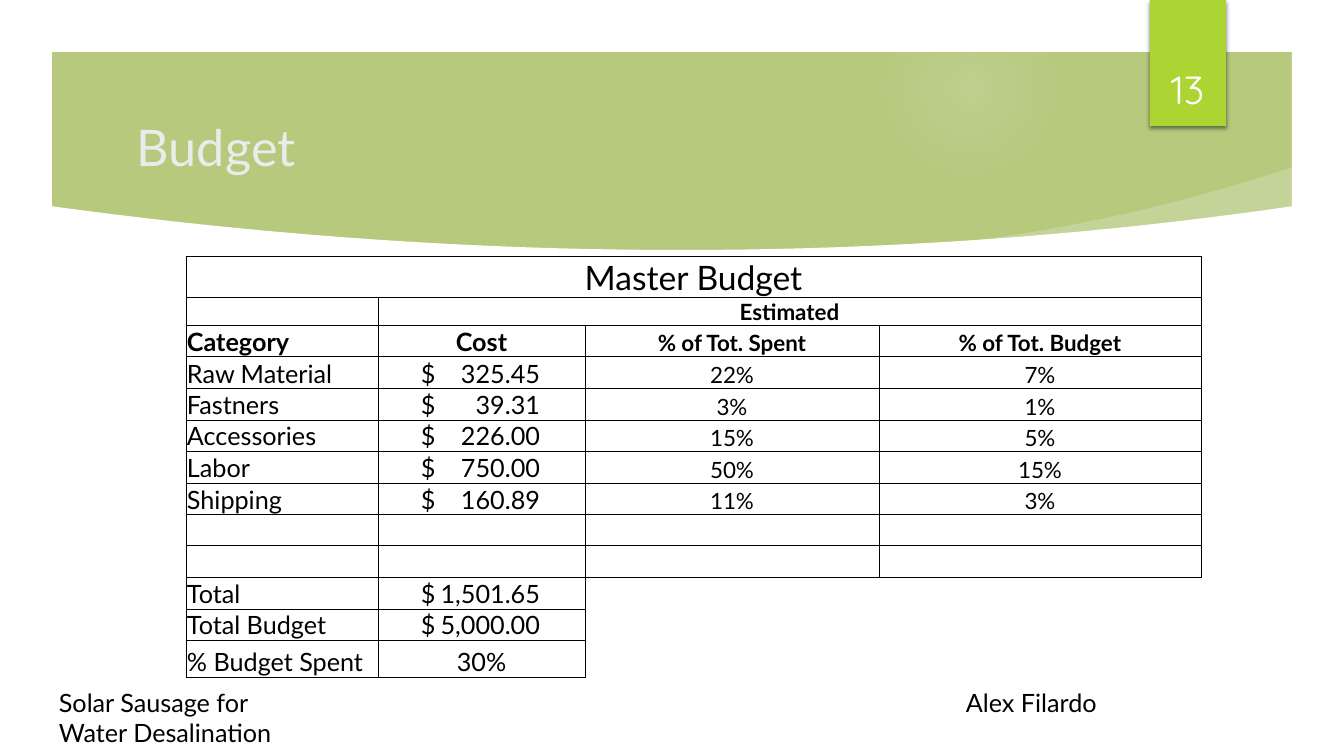
from dataclasses import dataclass
from typing import Optional

from lxml.etree import SubElement
from pptx import Presentation
from pptx.dml.color import RGBColor
from pptx.enum.shapes import MSO_SHAPE as Preset
from pptx.enum.text import MSO_ANCHOR as Anchor, PP_ALIGN as Align
from pptx.oxml import parse_xml
from pptx.oxml.ns import nsdecls, qn
from pptx.util import Pt

EMU_PER_PX = 914400 / 100.8
PLAIN_TABLE = "{2D5ABB26-0587-4C30-8999-92F81FD0307C}"


@dataclass(frozen=True)
class Theme:
    band: str = "B6C97D"
    white: str = "FFFFFF"
    glow: str = "F7F7F7"
    accent: str = "ACD433"
    heading: str = "EBEBEB"
    ink: str = "000000"
    body_font: str = "Lato"
    number_font: str = "Quicksand"
    title_size: int = 36
    number_size: int = 28
    caption_size: int = 24
    text_size: int = 18
    detail_size: int = 16


@dataclass(frozen=True)
class Box:
    left: int
    top: int
    width: int
    height: int


@dataclass(frozen=True)
class BudgetLine:
    category: str = ""
    cost: str = ""
    spent: str = ""
    budget: str = ""
    bold: bool = False
    boxed: int = 4  # number of cells with borders


THEME = Theme()
COLUMN_EDGES = (186, 378, 585, 879, 1201)
ROW_EDGES = (256, 297, 325, 356, 388, 419, 450, 482, 513, 544, 576, 607, 638, 675)
COST_INSET, COST_WIDTH = 43, 119
BUDGET = (
    BudgetLine("Master Budget"),
    BudgetLine(cost="Estimated", bold=True),
    BudgetLine("Category", "Cost", "% of Tot. Spent", "% of Tot. Budget", bold=True),
    BudgetLine("Raw Material", "$\t325.45", "22%", "7%"),
    BudgetLine("Fastners", "$\t39.31", "3%", "1%"),
    BudgetLine("Accessories", "$\t226.00", "15%", "5%"),
    BudgetLine("Labor", "$\t750.00", "50%", "15%"),
    BudgetLine("Shipping", "$\t160.89", "11%", "3%"),
    BudgetLine(),
    BudgetLine(),
    BudgetLine("Total", "$\t1,501.65", boxed=2),
    BudgetLine("Total Budget", "$\t5,000.00", boxed=2),
    BudgetLine("% Budget Spent", "30%", boxed=2),
)


def px(length: float) -> int:
    return round(length * EMU_PER_PX)


def place(box: Box) -> tuple:
    return px(box.left), px(box.top), px(box.width), px(box.height)


def write(frame, text: str, *, size: int, color: str = THEME.ink, font: str = THEME.body_font,
          bold: bool = False, align=Align.LEFT, anchor=Anchor.TOP,
          tab: Optional[int] = None, tab_align: str = "l") -> None:
    frame.word_wrap = True
    frame.vertical_anchor = anchor
    for index, line in enumerate(text.split("\n")):
        paragraph = frame.add_paragraph() if index else frame.paragraphs[0]
        paragraph.alignment = align
        if tab is not None:
            stops = SubElement(paragraph._p.get_or_add_pPr(), qn("a:tabLst"))
            SubElement(stops, qn("a:tab"), pos=str(px(tab)), algn=tab_align)
        if not line:
            SubElement(paragraph._p, qn("a:endParaRPr"), sz=str(size * 100))
            continue
        run = paragraph.add_run()
        run.text = line
        run.font.size, run.font.name, run.font.bold = Pt(size), font, bold
        run.font.color.rgb = RGBColor.from_string(color)


def add_label(slide, box: Box, text: str, **style) -> None:
    write(slide.shapes.add_textbox(*place(box)).text_frame, text, **style)


def paint(shape, color: str) -> None:
    shape.shadow.inherit = False
    shape.fill.solid()
    shape.fill.fore_color.rgb = RGBColor.from_string(color)
    shape.line.fill.background()


def add_preset(slide, preset, box: Box, color: str):
    shape = slide.shapes.add_shape(preset, *place(box))
    paint(shape, color)
    return shape


def curve(start: tuple, control: tuple, end: tuple, steps: int = 40) -> list:
    """Points on a quadratic arc."""
    return [tuple((1 - t) ** 2 * a + 2 * t * (1 - t) * b + t * t * c
                  for a, b, c in zip(start, control, end))
            for t in (step / steps for step in range(steps + 1))]


def add_outline(slide, points: list, color: str):
    corners = [(px(x), px(y)) for x, y in points]
    builder = slide.shapes.build_freeform(*corners[0])
    builder.add_line_segments(corners[1:], close=True)
    shape = builder.convert_to_shape()
    paint(shape, color)
    return shape


def add_backdrop(slide) -> None:
    slide.background.fill.solid()
    slide.background.fill.fore_color.rgb = RGBColor.from_string(THEME.band)

    # Soft light spot
    spot = add_preset(slide, Preset.OVAL, Box(882, 0, 176, 176), THEME.glow)
    stops = "".join(
        f'<a:gs pos="{pos}000"><a:srgbClr val="{THEME.glow}"><a:alpha val="{alpha}000"/></a:srgbClr></a:gs>'
        for pos, alpha in ((0, 14), (36, 7), (73, 0), (100, 0)))
    gradient = parse_xml(
        f'<a:gradFill {nsdecls("a")}><a:gsLst>{stops}</a:gsLst><a:path path="circle">'
        '<a:fillToRect l="50000" t="50000" r="50000" b="50000"/></a:path></a:gradFill>')
    solid = spot._element.spPr.find(qn("a:solidFill"))
    solid.getparent().replace(solid, gradient)

    # Pale streak, white page with curved top, white frame
    streak = add_outline(
        slide, curve((937, 245), (1115, 226), (1293, 167)) + [(1299, 216), (941, 252)], THEME.white)
    tint = streak._element.spPr.find(qn("a:solidFill"))[0]
    SubElement(tint, qn("a:alpha"), val="20000")
    add_outline(slide, curve((1294, 206), (690, 294), (50, 206)) + [(50, 706), (1294, 706)], THEME.white)
    frame = add_preset(slide, Preset.FRAME, Box(0, 0, 1344, 756), THEME.white)
    frame.adjustments[0] = 52 / 756

    # Page number tab
    tab = add_preset(slide, Preset.RECTANGLE, Box(1150, 0, 76, 126), THEME.accent)
    shadow = SubElement(tab._element.spPr.find(qn("a:effectLst")), qn("a:outerShdw"),
                        blurRad=str(Pt(3)), dist=str(Pt(2)), dir="5400000", rotWithShape="0")
    SubElement(SubElement(shadow, qn("a:srgbClr"), val=THEME.ink), qn("a:alpha"), val="45000")


def add_borders(cell) -> None:
    for side in ("lnL", "lnR", "lnT", "lnB"):
        line = SubElement(cell._tc.get_or_add_tcPr(), qn(f"a:{side}"), w=str(Pt(0.5)))
        SubElement(SubElement(line, qn("a:solidFill")), qn("a:srgbClr"), val=THEME.ink)


def fill_cell(cell, text: str, column: int, row: int, bold: bool) -> None:
    cell.margin_left = cell.margin_right = cell.margin_top = px(1)
    cell.margin_bottom = 0
    cell.vertical_anchor = Anchor.BOTTOM
    size = THEME.text_size if column < 2 else THEME.detail_size
    size = {0: THEME.caption_size, 1: THEME.detail_size}.get(row, size)
    is_money = "\t" in text
    if is_money:
        cell.margin_left = px(COST_INSET)
    left = is_money or (column == 0 and row > 0)
    write(cell.text_frame, text, size=size, bold=bold, anchor=Anchor.BOTTOM,
          align=Align.LEFT if left else Align.CENTER,
          tab=COST_WIDTH if is_money else None, tab_align="r")


def add_budget(slide) -> None:
    left, top = COLUMN_EDGES[0], ROW_EDGES[0]
    area = Box(left, top, COLUMN_EDGES[-1] - left, ROW_EDGES[-1] - top)
    table = slide.shapes.add_table(len(BUDGET), 4, *place(area)).table
    table._tbl.tblPr.find(qn("a:tableStyleId")).text = PLAIN_TABLE
    table.first_row = table.horz_banding = False
    for column, start, end in zip(table.columns, COLUMN_EDGES, COLUMN_EDGES[1:]):
        column.width = px(end - start)
    for row, start, end in zip(table.rows, ROW_EDGES, ROW_EDGES[1:]):
        row.height = px(end - start)
    table.cell(0, 0).merge(table.cell(0, 3))
    table.cell(1, 1).merge(table.cell(1, 3))
    for row, entry in enumerate(BUDGET):
        for column, text in enumerate((entry.category, entry.cost, entry.spent, entry.budget)):
            cell = table.cell(row, column)
            if column < entry.boxed:
                add_borders(cell)
            cell.fill.background()
            fill_cell(cell, text, column, row, entry.bold)


def main() -> None:
    deck = Presentation()
    deck.slide_width, deck.slide_height = px(1344), px(756)
    slide = deck.slides.add_slide(deck.slide_layouts[6])
    add_backdrop(slide)
    add_label(slide, Box(127, 107, 966, 78), "Budget", size=THEME.title_size,
              color=THEME.heading, anchor=Anchor.MIDDLE)
    add_label(slide, Box(1141, 32, 93, 85), "13", size=THEME.number_size, color=THEME.white,
              font=THEME.number_font, align=Align.CENTER, anchor=Anchor.BOTTOM)
    add_budget(slide)
    add_label(slide, Box(49, 682, 1313, 72), "Solar Sausage for\tAlex Filardo\nWater Desalination",
              size=THEME.text_size, tab=907)
    deck.save("out.pptx")


if __name__ == "__main__":
    main()
